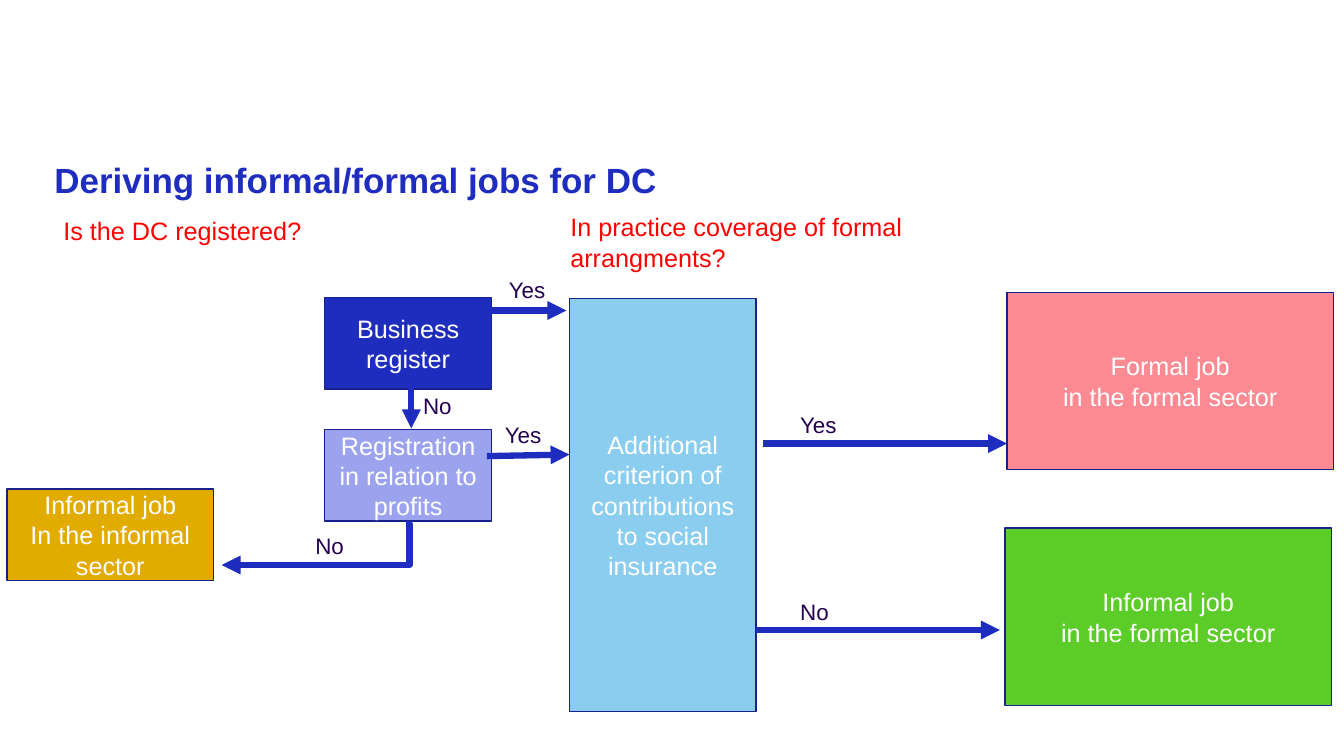
import lxml.etree
import pptx
import pptx.util
import pptx.dml.color
import pptx.enum.shapes
import pptx.enum.text
import pptx.oxml.ns

Pt = pptx.util.Pt
qn = pptx.oxml.ns.qn
PP_ALIGN = pptx.enum.text.PP_ALIGN
ANCHOR = pptx.enum.text.MSO_ANCHOR
CONNECTOR = pptx.enum.shapes.MSO_CONNECTOR
RECT = pptx.enum.shapes.MSO_SHAPE.RECTANGLE

COLORS = {
    "blue": "1E2DBE",
    "outline": "16218D",
    "lavender": "9BA3EF",
    "sky": "8ACDEE",
    "pink": "FC8A93",
    "green": "5CCC28",
    "gold": "E1AB00",
    "red": "FF0000",
    "label": "230050",
    "white": "FFFFFF",
}


def rgb(name):
    return pptx.dml.color.RGBColor.from_string(COLORS[name])


def write(tf, lines, size, color, bold=False, align=PP_ALIGN.LEFT):
    tf.word_wrap = True
    for i, line in enumerate(lines):
        p = tf.add_paragraph() if i else tf.paragraphs[0]
        p.alignment = align
        r = p.add_run()
        r.text = line
        r.font.name = "Arial"
        r.font.size = Pt(size)
        r.font.bold = bold
        r.font.color.rgb = rgb(color)


def add_text(s, x, y, w, h, text, size, color, bold=False):
    sp = s.shapes.add_textbox(Pt(x), Pt(y), Pt(w), Pt(h))
    write(sp.text_frame, [text], size, color, bold)
    return sp.text_frame


def add_title(s, text):
    tf = add_text(s, 38.9, 116.6, 690.5, 36, text, 25, "blue", True)
    tf.margin_left = tf.margin_right = tf.margin_top = tf.margin_bottom = 0
    tf.paragraphs[0].line_spacing = 0.9


def add_label(s, x, y, text):
    add_text(s, x, y, 55.4, 26.6, text, 16, "label")


def add_box(s, x, y, w, h, fill, *lines):
    sp = s.shapes.add_shape(RECT, Pt(x), Pt(y), Pt(w), Pt(h))
    sp.shadow.inherit = False
    sp.fill.solid()
    sp.fill.fore_color.rgb = rgb(fill)
    sp.line.color.rgb = rgb("outline")
    sp.line.width = Pt(1)
    sp.text_frame.vertical_anchor = ANCHOR.MIDDLE
    write(sp.text_frame, lines, 18, "white", align=PP_ALIGN.CENTER)


def add_arrow(s, x1, y1, x2, y2, kind=CONNECTOR.STRAIGHT):
    cx = s.shapes.add_connector(kind, Pt(x1), Pt(y1), Pt(x2), Pt(y2))
    cx.line.color.rgb = rgb("blue")
    cx.line.width = Pt(4.5)
    spPr = cx.element.spPr
    lxml.etree.SubElement(spPr.find(qn("a:ln")), qn("a:tailEnd"), type="triangle")
    lxml.etree.SubElement(spPr, qn("a:effectLst"))
    return cx


def add_elbow_arrow(s, x1, y1, x2, y2, bend):
    cx = add_arrow(s, x1, y1, x2, y2, CONNECTOR.ELBOW)
    av = cx.element.spPr.find(qn("a:prstGeom")).find(qn("a:avLst"))
    lxml.etree.SubElement(av, qn("a:gd"), name="adj1", fmla=f"val {bend}")


def main():
    prs = pptx.Presentation()
    prs.slide_width, prs.slide_height = Pt(960), Pt(540)
    s = prs.slides.add_slide(prs.slide_layouts[6])

    add_title(s, "Deriving informal/formal jobs for DC")
    add_text(s, 38.2, 150.5, 335.5, 29, "Is the DC registered?", 18, "red")
    add_text(s, 400.3, 147.6, 335.5, 51,
             "In practice coverage of formal arrangments?", 18, "red")

    add_box(s, 231.8, 212.4, 119.5, 65.5, "blue", "Business register")
    add_box(s, 231.8, 306.7, 119.5, 65.5, "lavender",
            "Registration in relation to profits")
    add_box(s, 5, 349.2, 147.6, 65.5, "gold", "Informal job", "In the informal sector")
    add_box(s, 406.8, 213.1, 133.2, 295.2, "sky",
            "Additional criterion of contributions to social insurance")
    add_box(s, 719.3, 208.8, 233.3, 126.7, "pink", "Formal job", "in the formal sector")
    add_box(s, 717.8, 377.3, 233.3, 126.7, "green", "Informal job", "in the formal sector")

    add_arrow(s, 350.6, 221.8, 404.6, 221.8)
    add_arrow(s, 347.8, 325.8, 406.8, 324.7)
    add_arrow(s, 293.8, 276.5, 293.8, 306)
    add_arrow(s, 545, 316.8, 719.3, 316.8)
    add_arrow(s, 540, 450, 714.2, 450)
    add_elbow_arrow(s, 290.2, 374.4, 158.4, 403.6, -1700)

    for x, y, text in [
        (356.4, 193.7, "Yes"),
        (353.5, 297.4, "Yes"),
        (564.5, 290.2, "Yes"),
        (295.2, 276.5, "No"),
        (218.2, 376.6, "No"),
        (564.5, 423.4, "No"),
    ]:
        add_label(s, x, y, text)

    prs.save("out.pptx")


if __name__ == "__main__":
    main()
